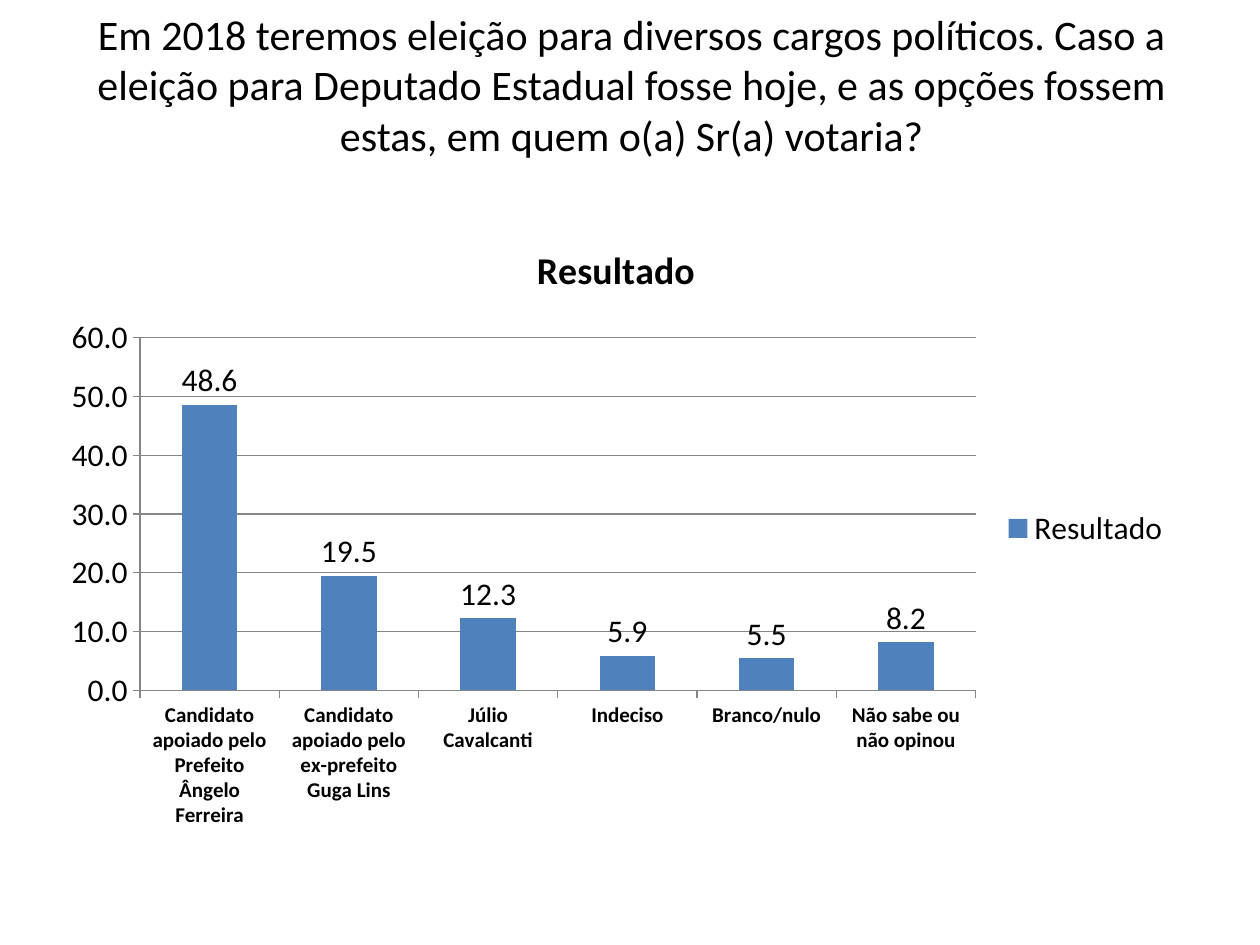
import dataclasses

import pptx
import pptx.chart.data
import pptx.dml.color
import pptx.enum.chart
import pptx.enum.text
import pptx.util

Pt = pptx.util.Pt
FONT = "Calibri"
BLACK, BLUE, GRAY = "000000", "4F81BD", "868686"


@dataclasses.dataclass
class Bar:
    label: str
    value: float


BARS = [
    Bar("Candidato apoiado pelo Prefeito Ângelo Ferreira", 48.6),
    Bar("Candidato apoiado pelo ex-prefeito Guga Lins", 19.5),
    Bar("Júlio Cavalcanti", 12.3),
    Bar("Indeciso", 5.9),
    Bar("Branco/nulo", 5.5),
    Bar("Não sabe ou não opinou", 8.2),
]


def paint(color, code: str) -> None:
    color.rgb = pptx.dml.color.RGBColor.from_string(code)


def style(font, size: float, bold: bool = False, color: str = BLACK) -> None:
    font.name, font.size, font.bold = FONT, Pt(size), bold
    paint(font.color, color)


def write(frame, text: str, **form) -> None:
    part = frame.paragraphs[0]
    part.alignment = pptx.enum.text.PP_ALIGN.CENTER
    run = part.add_run()
    run.text = text
    style(run.font, **form)


def add_head(slide, text: str) -> None:
    frame = slide.shapes.add_textbox(Pt(34), Pt(0), Pt(654), Pt(96)).text_frame
    frame.word_wrap = True
    frame.vertical_anchor = pptx.enum.text.MSO_ANCHOR.MIDDLE
    write(frame, text, size=24)


def set_axis(axis, size: float, bold: bool) -> None:
    style(axis.tick_labels.font, size, bold)
    axis.major_tick_mark = pptx.enum.chart.XL_TICK_MARK.OUTSIDE
    axis.minor_tick_mark = pptx.enum.chart.XL_TICK_MARK.NONE
    paint(axis.format.line.color, GRAY)
    axis.format.line.width = Pt(0.75)


def add_bars(slide, name: str, bars: list[Bar]) -> None:
    data = pptx.chart.data.CategoryChartData(number_format="0.0")
    data.categories = [bar.label for bar in bars]
    data.add_series(name, [bar.value for bar in bars])
    kind = pptx.enum.chart.XL_CHART_TYPE.COLUMN_CLUSTERED
    chart = slide.shapes.add_chart(
        kind, Pt(28), Pt(124), Pt(648), Pt(356), data).chart
    style(chart.font, 18)

    # Title and legend
    chart.has_title = True
    write(chart.chart_title.text_frame, name, size=21.6, bold=True)
    chart.chart_title.include_in_layout = False
    chart.has_legend = True
    chart.legend.position = pptx.enum.chart.XL_LEGEND_POSITION.RIGHT
    chart.legend.include_in_layout = False
    style(chart.legend.font, 18)

    # Axes
    set_axis(chart.category_axis, 12, True)
    scale = chart.value_axis
    set_axis(scale, 18, False)
    scale.minimum_scale, scale.maximum_scale, scale.major_unit = 0, 60, 10
    scale.tick_labels.number_format = "0.0"
    scale.tick_labels.number_format_is_linked = False
    scale.has_major_gridlines = True
    grid = scale.major_gridlines.format.line
    paint(grid.color, GRAY)
    grid.width = Pt(0.75)

    # Columns and their values
    plot = chart.plots[0]
    plot.gap_width = 150
    plot.vary_by_categories = False
    fill = plot.series[0].format.fill
    fill.solid()
    paint(fill.fore_color, BLUE)
    plot.has_data_labels = True
    tags = plot.data_labels
    tags.show_value = True
    tags.number_format = "0.0"
    tags.number_format_is_linked = False
    tags.position = pptx.enum.chart.XL_LABEL_POSITION.OUTSIDE_END
    style(tags.font, 18)


def main() -> None:
    deck = pptx.Presentation()
    deck.slide_width, deck.slide_height = Pt(720), Pt(540)
    slide = deck.slides.add_slide(deck.slide_layouts[6])
    add_head(slide, "Em 2018 teremos eleição para diversos cargos políticos. "
             "Caso a eleição para Deputado Estadual fosse hoje, e as opções "
             "fossem estas, em quem o(a) Sr(a) votaria?")
    add_bars(slide, "Resultado", BARS)
    deck.save("out.pptx")


if __name__ == "__main__":
    main()
